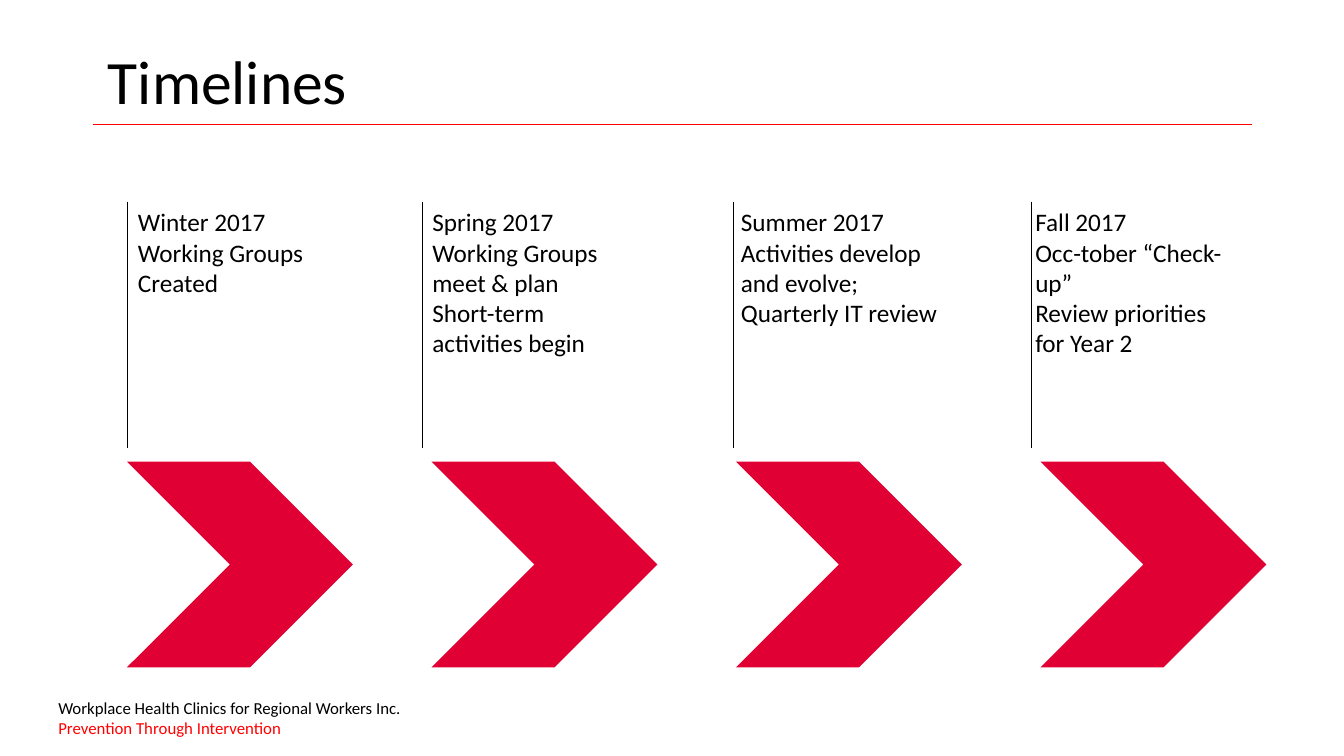
from dataclasses import dataclass

from lxml import etree
from pptx import Presentation
from pptx import util as u
from pptx.dml.color import RGBColor
from pptx.enum import shapes, text
from pptx.oxml.ns import qn


@dataclass(frozen=True)
class Theme:
    font: str = "Calibri"
    ink: str = "000000"
    accent: str = "FF0000"
    chevron: str = "E00034"
    background: str = "FFFFFF"
    title_size: int = 44
    body_size: int = 18
    footer_size: int = 12
    line_width: float = 0.5


THEME = Theme()

# Each stage: divider x, text x, paragraphs
STAGES = [
    (1.26, 1.27, ["Winter 2017", "Working Groups", "Created"]),
    (4.19, 4.19, ["Spring 2017", "Working Groups meet & plan",
                  "Short-term activities begin"]),
    (7.27, 7.25, ["Summer 2017",
                  "Activities develop and evolve; Quarterly IT review"]),
    (10.23, 10.17, ["Fall 2017", "Occ-tober “Check-up”",
                    "Review priorities for Year 2"]),
]
CHEVRON_LEFT, CHEVRON_STEP = 1.26, 3.02
DIVIDER_TOP, DIVIDER_BOTTOM = 2, 4.44


def format_paragraph(paragraph, size, color):
    for run in paragraph.runs:
        run.font.name = THEME.font
        run.font.size = u.Pt(size)
        run.font.color.rgb = RGBColor.from_string(color)


def add_title(slide, wording):
    title = slide.shapes.title
    title.left, title.top = u.Inches(0.97), u.Inches(0.11)
    title.width, title.height = u.Inches(11.5), u.Inches(1.45)
    frame = title.text_frame
    frame.text = wording
    frame.vertical_anchor = text.MSO_ANCHOR.MIDDLE
    paragraph = frame.paragraphs[0]
    paragraph.alignment = text.PP_ALIGN.LEFT
    paragraph.line_spacing = 0.9
    format_paragraph(paragraph, THEME.title_size, THEME.ink)


def add_text(slide, left, top, width, height, lines, size, colors):
    box = slide.shapes.add_textbox(u.Inches(left), u.Inches(top),
                                   u.Inches(width), u.Inches(height))
    frame = box.text_frame
    frame.word_wrap = True
    frame.text = "\n".join(lines)
    for paragraph, color in zip(frame.paragraphs, colors):
        format_paragraph(paragraph, size, color)


def add_line(slide, x1, y1, x2, y2, color):
    line = slide.shapes.add_connector(
        shapes.MSO_CONNECTOR.STRAIGHT,
        u.Inches(x1), u.Inches(y1), u.Inches(x2), u.Inches(y2))
    line.line.color.rgb = RGBColor.from_string(color)
    line.line.width = u.Pt(THEME.line_width)
    etree.SubElement(line.element.spPr, qn("a:effectLst"))


def add_chevron(slide, left):
    chevron = slide.shapes.add_shape(
        shapes.MSO_SHAPE.CHEVRON, u.Inches(left), u.Inches(4.58),
        u.Inches(2.24), u.Inches(2.04))
    chevron.shadow.inherit = False
    chevron.fill.solid()
    chevron.fill.fore_color.rgb = RGBColor.from_string(THEME.chevron)
    chevron.line.fill.background()


def main():
    presentation = Presentation()
    presentation.slide_width = u.Inches(13.33)
    presentation.slide_height = u.Inches(7.5)
    slide = presentation.slides.add_slide(presentation.slide_layouts[5])
    slide.background.fill.solid()
    slide.background.fill.fore_color.rgb = RGBColor.from_string(THEME.background)

    # Heading and rule
    add_title(slide, "Timelines")
    add_line(slide, 0.92, 1.23, 12.42, 1.23, THEME.accent)

    # Timeline stages
    for index, (divider_x, text_x, lines) in enumerate(STAGES):
        add_chevron(slide, CHEVRON_LEFT + index * CHEVRON_STEP)
        add_line(slide, divider_x, DIVIDER_TOP, divider_x, DIVIDER_BOTTOM,
                 THEME.ink)
        add_text(slide, text_x, DIVIDER_TOP, 2.23, 1.62, lines,
                 THEME.body_size, [THEME.ink] * len(lines))

    # Footer
    add_text(slide, 0.48, 6.87, 5.3, 0.5,
             ["Workplace Health Clinics for Regional Workers Inc.",
              "Prevention Through Intervention"],
             THEME.footer_size, [THEME.ink, THEME.accent])

    presentation.save("out.pptx")


if __name__ == "__main__":
    main()
